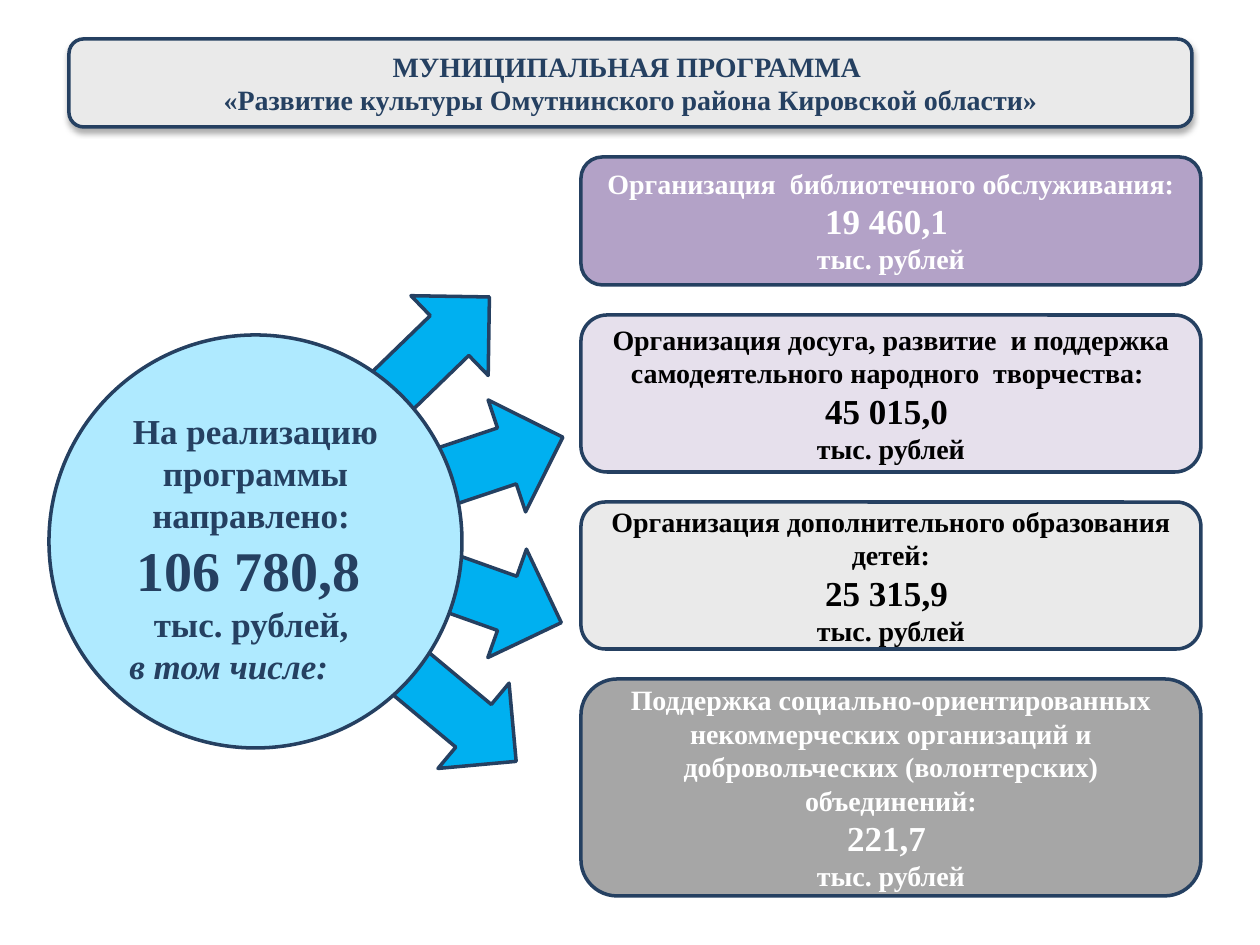
import pptx
import pptx.util
import pptx.dml.color
import pptx.enum.shapes
import pptx.enum.text
import pptx.oxml
import pptx.oxml.ns

RGB = pptx.dml.color.RGBColor
KIND = pptx.enum.shapes.MSO_SHAPE
ALIGN = pptx.enum.text.PP_ALIGN
ANCHOR = pptx.enum.text.MSO_ANCHOR

NAVY = RGB(0x25, 0x40, 0x61)
BLUE = RGB(0x00, 0xB0, 0xF0)
PALE = RGB(0xAF, 0xEA, 0xFF)
GREY = RGB(0xEA, 0xEA, 0xEA)
DARK = RGB(0xA6, 0xA6, 0xA6)
PLUM = RGB(0xB3, 0xA2, 0xC7)
LILAC = RGB(0xE6, 0xE0, 0xEC)
WHITE = RGB(0xFF, 0xFF, 0xFF)
BLACK = RGB(0x00, 0x00, 0x00)

FONT = "Times New Roman"
SCALE = 914400 / 126

# Arrows: left, top, width, height, turn
ARROWS = [
    (243, 607, 309, 111, 39.8),
    (236, 509, 335, 115, 19.6),
    (294, 422, 276, 118, 341.5),
    (224, 349, 309, 111, 315.9),
]

# Spending cards: height, fill, text colour, purpose, amount
CARDS = [
    (128, PLUM, WHITE, "Организация  библиотечного обслуживания:", "19 460,1 "),
    (157, LILAC, BLACK, "Организация досуга, развитие  и поддержка "
     "самодеятельного народного  творчества: ", "45 015,0 "),
    (147, GREY, BLACK, "Организация дополнительного образования детей:",
     "25 315,9 "),
    (217, DARK, WHITE, "Поддержка социально-ориентированных некоммерческих "
     "организаций и добровольческих (волонтерских) объединений:", "221,7 "),
]


def px(num):
    return pptx.util.Emu(round(num * SCALE))


def add_form(slide, kind, box, fill, turn=0):
    form = slide.shapes.add_shape(kind, *map(px, box))
    form.shadow.inherit = False
    form.fill.solid()
    form.fill.fore_color.rgb = fill
    form.line.color.rgb = NAVY
    form.line.width = pptx.util.Pt(2)
    form.rotation = turn
    form.text_frame.word_wrap = True
    form.text_frame.vertical_anchor = ANCHOR.MIDDLE
    return form


def add_line(frame, text, size=16, color=NAVY, italic=False,
             align=ALIGN.CENTER, indent=0):
    first = frame.paragraphs[0]
    para = frame.add_paragraph() if first.runs else first
    para.alignment = align
    if indent:
        para._p.get_or_add_pPr().set("marL", str(px(indent)))
    run = para.add_run()
    run.text = text
    font = run.font
    font.name, font.size = FONT, pptx.util.Pt(size)
    font.bold, font.italic = True, italic
    font.color.rgb = color


def add_shade(form):
    shade = pptx.oxml.parse_xml(
        f'<a:outerShdw {pptx.oxml.ns.nsdecls("a")} blurRad="44450" '
        'dist="27940" dir="5400000" algn="ctr" rotWithShape="0">'
        '<a:srgbClr val="000000"><a:alpha val="32000"/></a:srgbClr>'
        '</a:outerShdw>')
    form._element.spPr.find(pptx.oxml.ns.qn("a:effectLst")).append(shade)


def add_title(slide):
    form = add_form(slide, KIND.ROUNDED_RECTANGLE, (69, 39, 1123, 88), GREY)
    add_shade(form)
    add_line(form.text_frame, "МУНИЦИПАЛЬНАЯ ПРОГРАММА ")
    add_line(form.text_frame,
             "«Развитие культуры Омутнинского района Кировской области»")


def add_total(slide):
    add_form(slide, KIND.OVAL, (49, 335, 413, 413), PALE)
    frame = slide.shapes.add_textbox(*map(px, (108, 403, 295, 292))).text_frame
    frame.word_wrap = True
    add_line(frame, "На реализацию программы направлено: ", size=20)
    add_line(frame, "106 780,8 ", size=32)
    add_line(frame, "тыс. рублей, ", size=20)
    add_line(frame, "в том числе:", size=20, italic=True,
             align=ALIGN.LEFT, indent=9)


def add_cards(slide, top=157, gap=30):
    for high, fill, color, goal, sum_ in CARDS:
        form = add_form(slide, KIND.ROUNDED_RECTANGLE,
                        (581, top, 620, high), fill)
        add_line(form.text_frame, goal, color=color)
        add_line(form.text_frame, sum_, size=20, color=color)
        add_line(form.text_frame, "тыс. рублей", color=color)
        top += high + gap


def main():
    deck = pptx.Presentation()
    deck.slide_width, deck.slide_height = px(1260), px(945)
    slide = deck.slides.add_slide(deck.slide_layouts[6])
    # Arrows lie behind the circle
    for *box, turn in ARROWS:
        add_form(slide, KIND.RIGHT_ARROW, box, BLUE, turn)
    add_title(slide)
    add_total(slide)
    add_cards(slide)
    deck.save("out.pptx")


if __name__ == "__main__":
    main()
